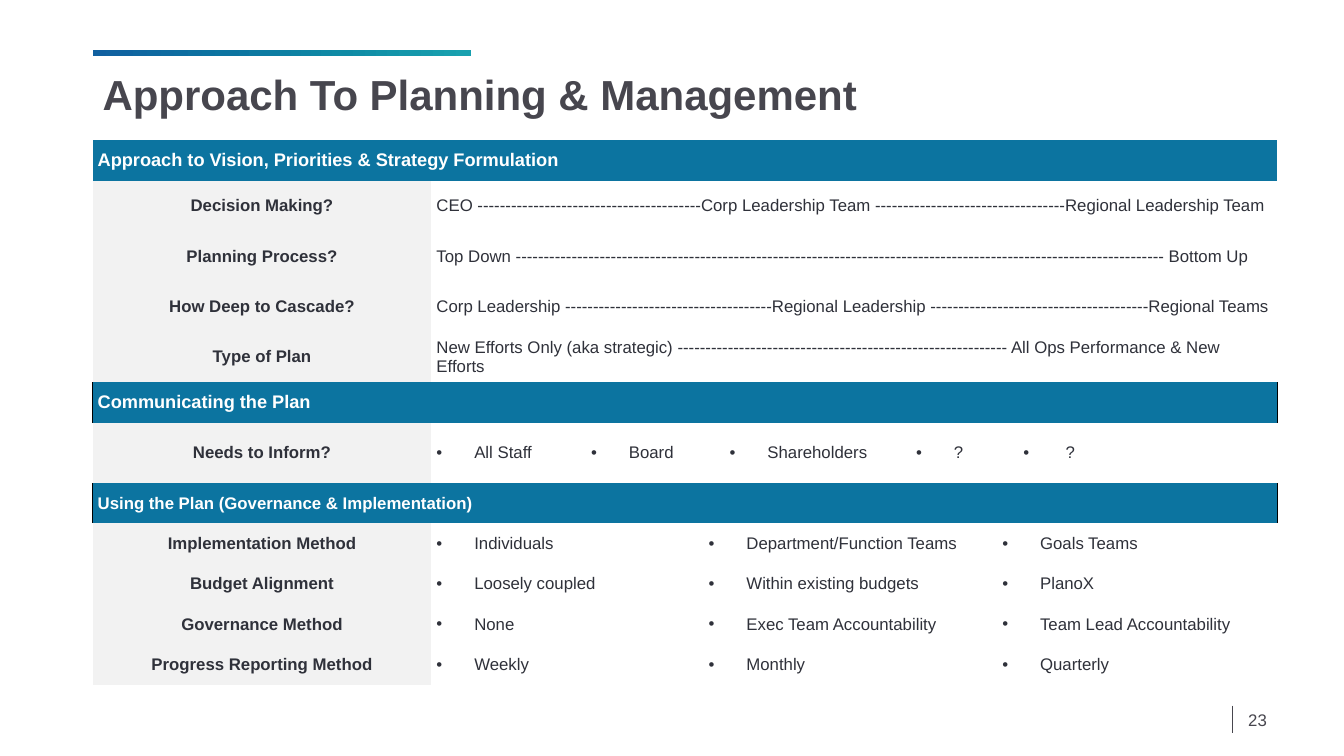
from copy import deepcopy

from pptx import Presentation
from pptx.dml.color import RGBColor
from pptx.enum.shapes import MSO_CONNECTOR, MSO_SHAPE
from pptx.enum.text import MSO_ANCHOR, PP_ALIGN
from pptx.oxml.ns import qn
from pptx.oxml.xmlchemy import OxmlElement
from pptx.util import Pt

FONT = "Arial"
WHITE = RGBColor(0xFF, 0xFF, 0xFF)
BLUE = RGBColor(0x0C, 0x74, 0xA0)
LIGHT_GRAY = RGBColor(0xF2, 0xF2, 0xF2)
SLATE = RGBColor(0x47, 0x46, 0x4E)
INK = RGBColor(0x2F, 0x31, 0x3A)
BAR_STOPS = [
    (0, RGBColor(0x10, 0x60, 0xA0)),
    (0.36, BLUE),
    (0.66, RGBColor(0x0F, 0x8B, 0xA5)),
    (0.99, RGBColor(0x19, 0xA1, 0xAF)),
]
NO_GRID_STYLE = "{2D5ABB26-0587-4C30-8999-92F81FD0307C}"
LEFT = 66.2


def add_text(paragraph, text, size, color, bold=False):
    run = paragraph.add_run()
    run.text = text
    run.font.name = FONT
    run.font.size = Pt(size)
    run.font.bold = bold
    run.font.color.rgb = color


def fill_cell(cell, text, color, size=12, bold=False, fill=None, bullet=False):
    cell.margin_left = cell.margin_right = Pt(3.6)
    cell.margin_top = cell.margin_bottom = 0
    cell.vertical_anchor = MSO_ANCHOR.MIDDLE
    if fill is None:
        cell.fill.background()
    else:
        cell.fill.solid()
        cell.fill.fore_color.rgb = fill
    paragraph = cell.text_frame.paragraphs[0]
    if bullet:
        properties = paragraph._p.get_or_add_pPr()
        properties.set("marL", str(Pt(27)))
        properties.set("indent", str(-Pt(27)))
        bullet_font = OxmlElement("a:buFont")
        bullet_font.set("typeface", FONT)
        bullet_char = OxmlElement("a:buChar")
        bullet_char.set("char", "•")
        properties.extend([bullet_font, bullet_char])
    add_text(paragraph, text, size, color, bold)
    return paragraph


presentation = Presentation()
presentation.slide_width = Pt(960)
presentation.slide_height = Pt(540)
slide = presentation.slides.add_slide(presentation.slide_layouts[6])

# Gradient bar above the title
bar = slide.shapes.add_shape(MSO_SHAPE.RECTANGLE, Pt(LEFT), Pt(36), Pt(270), Pt(4))
bar.shadow.inherit = False
bar.line.fill.background()
bar.fill.gradient()
bar.fill.gradient_angle = 0
stop_list = bar._element.spPr.find(qn("a:gradFill")).find(qn("a:gsLst"))
for _ in BAR_STOPS[2:]:
    stop_list.append(deepcopy(stop_list[0]))
for stop, (position, color) in zip(bar.fill.gradient_stops, BAR_STOPS):
    stop.position = position
    stop.color.rgb = color

# Title and page number
for text, left, top, width, height, size, bold, align in [
    ("Approach To Planning & Management", LEFT, 38, 828, 62.6, 30, True, PP_ALIGN.LEFT),
    ("23", 678, 500.5, 234, 28.8, 12, False, PP_ALIGN.RIGHT),
]:
    box = slide.shapes.add_textbox(Pt(left), Pt(top), Pt(width), Pt(height))
    box.text_frame.word_wrap = True
    box.text_frame.vertical_anchor = MSO_ANCHOR.MIDDLE
    paragraph = box.text_frame.paragraphs[0]
    paragraph.alignment = align
    paragraph.line_spacing = 0.9
    add_text(paragraph, text, size, SLATE, bold)

# Rule beside the page number
rule = slide.shapes.add_connector(
    MSO_CONNECTOR.STRAIGHT, Pt(880), Pt(504), Pt(880), Pt(523.5))
rule.line.color.rgb = SLATE
rule.line.width = Pt(0.5)
rule._element.spPr.append(OxmlElement("a:effectLst"))

# Table rows: height, label, then (first column, last column, text) per answer
FULL, THIRDS = [(1, 7)], [(1, 2), (3, 5), (6, 7)]
INFORM = [(1, 1), (2, 3), (4, 4), (5, 6), (7, 7)]
rows = [
    (28.8, "Approach to Vision, Priorities & Strategy Formulation", [], []),
    (36, "Decision Making?", FULL,
     ["CEO " + "-" * 40 + "Corp Leadership Team " + "-" * 34 + "Regional Leadership Team"]),
    (36, "Planning Process?", FULL, ["Top Down " + "-" * 116 + " Bottom Up"]),
    (36, "How Deep to Cascade?", FULL,
     ["Corp Leadership " + "-" * 37 + "Regional Leadership " + "-" * 39 + "Regional Teams"]),
    (36, "Type of Plan", FULL,
     ["New Efforts Only (aka strategic) " + "-" * 59 + " All Ops Performance & New Efforts"]),
    (28.8, "Communicating the Plan", [], []),
    (43.2, "Needs to Inform?", INFORM, ["All Staff", "Board", "Shareholders", "?", " ?"]),
    (28.8, "Using the Plan (Governance & Implementation)", [], []),
    (28.8, "Implementation Method", THIRDS,
     ["Individuals", "Department/Function Teams", "Goals Teams"]),
    (28.8, "Budget Alignment", THIRDS,
     ["Loosely coupled", "Within existing budgets", "PlanoX"]),
    (28.8, "Governance Method", THIRDS,
     ["None", "Exec Team Accountability", "Team Lead Accountability"]),
    (28.8, "Progress Reporting Method", THIRDS, ["Weekly", "Monthly", "Quarterly"]),
]
column_widths = [242, 110.4, 84, 15, 133.2, 61.6, 15, 185.2]
frame = slide.shapes.add_table(
    len(rows), len(column_widths), Pt(LEFT), Pt(100.2),
    Pt(sum(column_widths)), Pt(sum(row[0] for row in rows)))
table = frame.table
table.first_row = table.horz_banding = False
table._tbl.tblPr.find(qn("a:tableStyleId")).text = NO_GRID_STYLE
for column, width in zip(table.columns, column_widths):
    column.width = Pt(width)

for index, (height, label, spans, answers) in enumerate(rows):
    table.rows[index].height = Pt(height)
    label_cell = table.cell(index, 0)
    if spans:
        paragraph = fill_cell(label_cell, label, INK, bold=True, fill=LIGHT_GRAY)
        paragraph.alignment = PP_ALIGN.CENTER
    else:
        # Section band, with black side borders below the first one
        label_cell.merge(table.cell(index, len(column_widths) - 1))
        for side in ("a:lnL", "a:lnR") if index else ():
            border = OxmlElement(side)
            border.set("w", str(Pt(1)))
            solid = OxmlElement("a:solidFill")
            black = OxmlElement("a:srgbClr")
            black.set("val", "000000")
            solid.append(black)
            border.append(solid)
            label_cell._tc.get_or_add_tcPr().append(border)
        size = 12 if label.startswith("Using") else 13
        fill_cell(label_cell, label, WHITE, size, bold=True, fill=BLUE)
    for (first, last), answer in zip(spans, answers):
        cell = table.cell(index, first)
        if last > first:
            cell.merge(table.cell(index, last))
        fill_cell(cell, answer, INK, bullet=spans is not FULL)

presentation.save("out.pptx")
